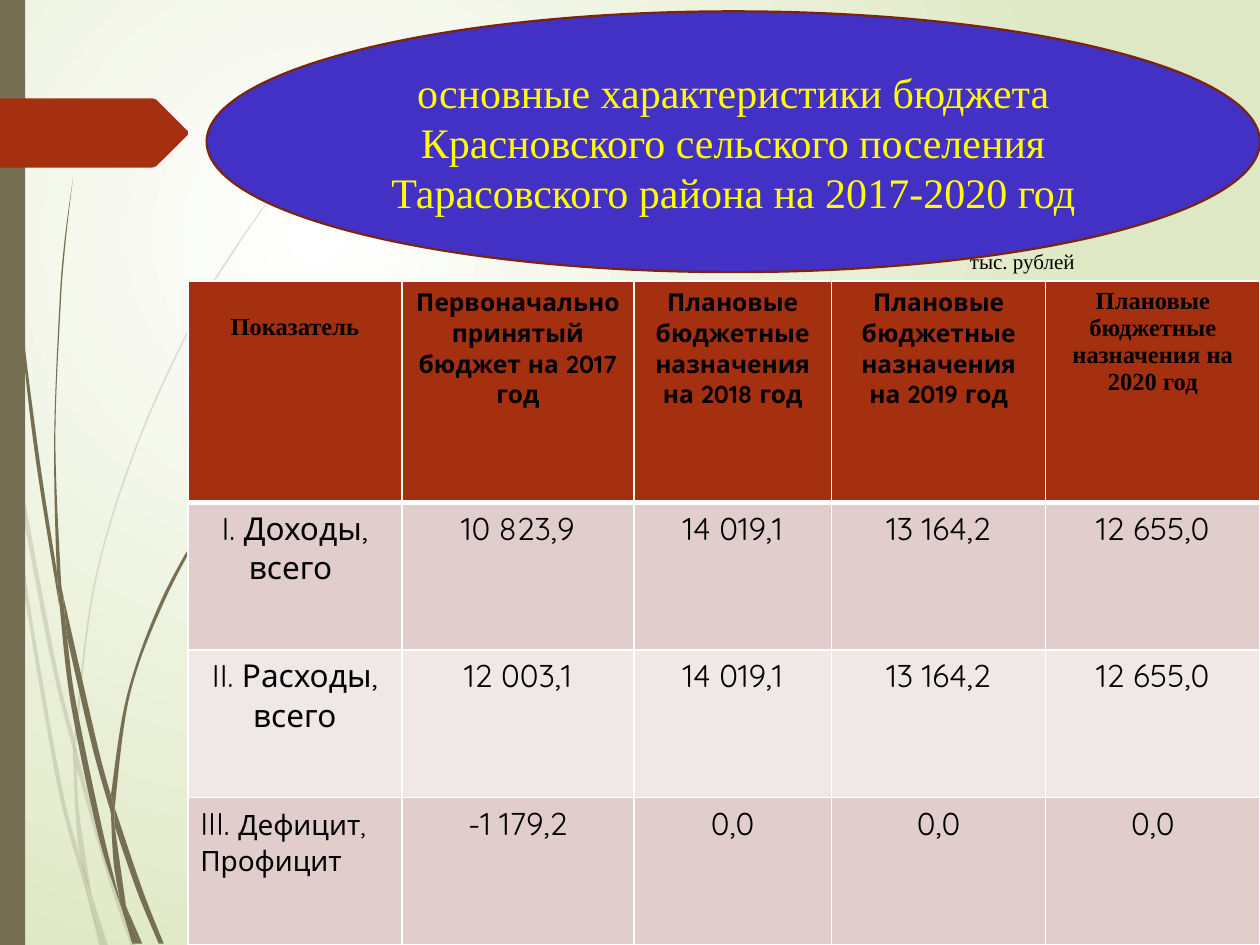
import pptx
import pptx.dml.color
import pptx.enum.shapes
import pptx.enum.text
import pptx.oxml
import pptx.oxml.ns
import pptx.util
from lxml import etree

Inches, Pt = pptx.util.Inches, pptx.util.Pt
qn = pptx.oxml.ns.qn
CENTER = pptx.enum.text.PP_ALIGN.CENTER
LEFT = pptx.enum.text.PP_ALIGN.LEFT
MIDDLE = pptx.enum.text.MSO_ANCHOR.MIDDLE
SHAPES = pptx.enum.shapes.MSO_SHAPE

SERIF, SANS = "Times New Roman", "Quicksand"
OLIVE, RUST, BLACK, WHITE = "766F54", "A53010", "000000", "FFFFFF"
BAND_FILLS = ["E1CDCC", "F0E8E7"]

TITLE = ("основные характеристики бюджета Красновского сельского поселения "
         "Тарасовского района на 2017-2020 год")
UNITS = "тыс. рублей"
HEADERS = [
    ("Показатель", SERIF),
    ("Первоначально принятый бюджет на 2017 год", SANS),
    ("Плановые бюджетные назначения на 2018 год", SANS),
    ("Плановые бюджетные назначения на 2019 год", SANS),
    ("Плановые бюджетные назначения на 2020 год", SERIF),
]
ROWS = [
    ["I. Доходы,\nвсего ", "10 823,9", "14 019,1", "13 164,2", "12 655,0"],
    ["II. Расходы, всего", "12 003,1", "14 019,1", "13 164,2", "12 655,0"],
    ["III. Дефицит,\nПрофицит", "-1 179,2", "0,0", "0,0", "0,0"],
]
COLUMN_WIDTHS = [1.7, 1.84, 1.57, 1.7, 1.7]
ROW_HEIGHTS = [1.76, 1.17, 1.17, 1.17]

# Each grass blade is a pair of edges running from one tip to the other.
FAINT_BLADES = [
    ([(0, 2.82), (0.06, 3.22), (0.08, 3.5)],
     [(0, 2.99), (0.07, 3.44), (0.08, 3.5)]),
    ([(0.1, 3.45), (0.43, 5.2), (0.59, 5.86)],
     [(0.12, 3.76), (0.4, 5.22), (0.59, 5.99)]),
    ([(0.61, 5.96), (0.88, 6.92), (1.08, 7.51)],
     [(0.61, 6.1), (0.85, 6.94), (1.04, 7.51)]),
    ([(0.73, 7.11), (0.86, 7.51)], [(0.83, 7.51)]),
    ([(0.08, 3.5), (0.12, 3.76), (0.22, 4.69), (0.48, 6.19), (0.64, 6.83), (0.7, 7.14)],
     [(0.19, 4.7), (0.45, 6.21), (0.64, 6.93)]),
    ([(0.58, 5.99), (0.6, 6.46), (0.64, 6.83), (0.73, 7.11)],
     [(0.61, 6.1), (0.63, 6.46), (0.72, 7.06)]),
    ([(2.17, 1.53), (1.86, 1.97), (1.58, 2.44), (1.1, 3.48), (0.75, 4.61), (0.59, 5.84)],
     [(2.17, 1.54), (1.87, 1.98), (1.59, 2.45), (1.11, 3.49), (0.76, 4.62), (0.61, 5.84),
      (0.61, 5.96)]),
    ([(0.7, 7.14), (0.79, 7.51)], [(0.82, 7.51)]),
    ([(0.59, 5.86), (0.58, 5.99), (0.61, 6.1)], [(0.61, 5.96)]),
    ([(0.65, 6.83), (0.7, 7.14), (0.82, 7.51)], [(0.73, 7.11), (0.83, 7.51)]),
]
SOLID_BLADES = [
    ([(0.02, 0), (0.05, 1.1), (0.14, 2.33), (0.27, 3.55), (0.47, 4.81)],
     [(0.03, 0), (0.06, 1.09), (0.15, 2.32), (0.3, 3.55), (0.45, 4.53)]),
    ([(0.5, 4.72), (0.77, 5.9), (0.88, 6.31)],
     [(0.53, 5.05), (0.73, 5.92), (0.88, 6.45)]),
    ([(0.91, 6.41), (1.13, 7.06), (1.3, 7.49)],
     [(0.91, 6.56), (1.09, 7.08), (1.26, 7.49)]),
    ([(0.47, 4.77), (0.53, 5.05), (0.6, 5.56), (0.81, 6.57), (0.97, 7.22)],
     [(0.47, 4.77), (0.56, 5.57), (0.77, 6.59), (0.92, 7.08)]),
    ([(0.58, 1.41), (0.51, 1.93), (0.47, 2.45), (0.43, 3.49), (0.45, 4.49), (0.49, 4.72)],
     [(0.58, 1.41), (0.52, 1.93), (0.48, 2.45), (0.44, 3.49), (0.48, 4.53), (0.5, 4.72)]),
    ([(1, 7.19), (1.1, 7.49)], [(1.13, 7.49)]),
    ([(0.45, 4.49), (0.47, 4.77), (0.53, 5.05)], [(0.5, 4.72)]),
    ([(2.15, 3.44), (1.91, 3.73), (1.68, 4.05), (1.29, 4.74), (1.01, 5.51), (0.88, 6.31)],
     [(2.16, 3.44), (1.91, 3.74), (1.69, 4.06), (1.31, 4.76), (1.03, 5.52), (0.91, 6.41)]),
    ([(0.97, 7.22), (1.05, 7.49)], [(1.08, 7.49)]),
    ([(0.88, 6.45), (0.91, 6.91), (1, 7.19)], [(0.91, 6.56)]),
    ([(0.88, 6.31), (0.88, 6.45), (0.91, 6.56)], [(0.91, 6.41)]),
    ([(0.91, 6.91), (0.97, 7.22), (1.08, 7.49)], [(1, 7.19), (1.1, 7.49)]),
]
ARROW = [(0, 0.78), (1.21, 0.78), (1.24, 0.79), (1.49, 1.04), (1.49, 1.07),
         (1.24, 1.32), (1.21, 1.33), (0, 1.33)]


def color(hex_text):
    return pptx.dml.color.RGBColor.from_string(hex_text)


def paint(shape, fill, line=None):
    shape.shadow.inherit = False
    shape.fill.solid()
    shape.fill.fore_color.rgb = color(fill)
    if line:
        shape.line.color.rgb = color(line)
        shape.line.width = Pt(1.25)
    else:
        shape.line.fill.background()


def set_font(font, name, size, hex_text=BLACK, bold=False):
    font.name, font.size, font.bold = name, Pt(size), bold
    font.color.rgb = color(hex_text)


def add_outline(slide, points, fill):
    corners = [(Inches(x), Inches(y)) for x, y in points]
    builder = slide.shapes.build_freeform(*corners[0])
    builder.add_line_segments(corners[1:], close=True)
    shape = builder.convert_to_shape()
    paint(shape, fill)
    return shape


def bend_edge(lines, points):
    """Turn the straight segments between the points into Bezier curves."""
    padded = [points[0], *points, points[-1]]
    for line, *around in zip(lines, padded, padded[1:], padded[2:], padded[3:]):
        before, start, end, after = around
        controls = [
            [round(s + (e - b) / 6) for b, s, e in zip(before, start, end)],
            [round(e - (a - s) / 6) for s, e, a in zip(start, end, after)],
        ]
        line.tag = qn("a:cubicBezTo")
        for index, (x, y) in enumerate(controls):
            line.insert(index, etree.Element(qn("a:pt"), x=str(x), y=str(y)))


def add_blades(slide, blades, opacity=None):
    for near_edge, far_edge in blades:
        shape = add_outline(slide, near_edge + far_edge[::-1], OLIVE)
        lines = list(shape._element.iter(qn("a:lnTo")))
        points = [(int(point.get("x")), int(point.get("y")))
                  for point in shape._element.iter(qn("a:pt"))]
        turn = len(near_edge)
        bend_edge(lines[:turn - 1], points[:turn])
        bend_edge(lines[turn:], points[turn:turn + len(far_edge)])
        if opacity:
            fill = shape._element.spPr.find(qn("a:solidFill"))
            etree.SubElement(fill[0], qn("a:alpha"), val=str(opacity * 1000))


def set_background(slide):
    fill = slide.background.fill
    fill.gradient()
    for stop, hex_text, position in zip(fill.gradient_stops, [WHITE, "DFE8C4"], [0, 1]):
        stop.color.rgb = color(hex_text)
        stop.position = position
    gradient = slide.background._cSld.find(".//" + qn("a:gradFill"))
    gradient.remove(gradient.find(qn("a:lin")))
    radial = etree.SubElement(gradient, qn("a:path"), {"path": "circle"})
    etree.SubElement(radial, qn("a:fillToRect"), l="50000", t="50000", r="100000", b="100000")


def fill_cell(cell, text, fill, name, size, bold=False, align=CENTER):
    cell.text = text
    cell.fill.solid()
    cell.fill.fore_color.rgb = color(fill)
    for paragraph in cell.text_frame.paragraphs:
        paragraph.alignment = align
        set_font(paragraph.font, name, size, BLACK, bold)


def add_bottom_border(cell, width):
    border = etree.Element(qn("a:lnB"), w=str(Pt(width)))
    solid = etree.SubElement(border, qn("a:solidFill"))
    etree.SubElement(solid, qn("a:srgbClr"), val=WHITE)
    cell._tc.get_or_add_tcPr().insert(0, border)


def add_budget_table(slide):
    table = slide.shapes.add_table(
        len(ROWS) + 1, len(HEADERS), Inches(1.49), Inches(2.23),
        Inches(sum(COLUMN_WIDTHS)), Inches(sum(ROW_HEIGHTS))).table
    for column, width in zip(table.columns, COLUMN_WIDTHS):
        column.width = Inches(width)
    for row, height in zip(table.rows, ROW_HEIGHTS):
        row.height = Inches(height)
    for index, (text, name) in enumerate(HEADERS):
        fill_cell(table.cell(0, index), text, RUST, name, 14, bold=True)
        add_bottom_border(table.cell(0, index), 3)
    table.cell(0, 0).margin_top = Inches(0.26)
    for row_index, values in enumerate(ROWS):
        for index, text in enumerate(values):
            fill_cell(table.cell(row_index + 1, index), text,
                      BAND_FILLS[row_index % 2], SANS, 18)

    balance = table.cell(len(ROWS), 0)
    fill_cell(balance, ROWS[-1][0], BAND_FILLS[0], SANS, 16, align=LEFT)
    first = balance.text_frame.paragraphs[0]
    numeral, word = first.text.split(" ")
    first.runs[0].text = numeral + " "
    first.runs[0].font.size = Pt(18)
    first.add_run().text = word


def main():
    presentation = pptx.Presentation()
    presentation.slide_width, presentation.slide_height = Inches(10), Inches(7.5)
    slide = presentation.slides.add_slide(presentation.slide_layouts[6])
    set_background(slide)
    add_blades(slide, FAINT_BLADES, opacity=20)
    add_blades(slide, SOLID_BLADES)
    paint(slide.shapes.add_shape(SHAPES.RECTANGLE, 0, 0, Inches(0.2), Inches(7.5)), OLIVE)
    add_outline(slide, ARROW, RUST)
    add_budget_table(slide)

    title = slide.shapes.add_shape(
        SHAPES.OVAL, Inches(1.64), Inches(0.09), Inches(8.36), Inches(2.07))
    paint(title, "4331C5", "7A240C")
    title.text_frame.text = TITLE
    title.text_frame.word_wrap = True
    title.text_frame.vertical_anchor = MIDDLE
    title.text_frame.paragraphs[0].alignment = CENTER
    set_font(title.text_frame.paragraphs[0].font, SERIF, 24, "FFFF00")

    units = slide.shapes.add_textbox(Inches(7.6), Inches(1.92), Inches(1.04), Inches(0.3))
    units.text_frame.text = UNITS
    units.text_frame.word_wrap = False
    set_font(units.text_frame.paragraphs[0].font, SERIF, 12)
    presentation.save("out.pptx")


if __name__ == "__main__":
    main()
